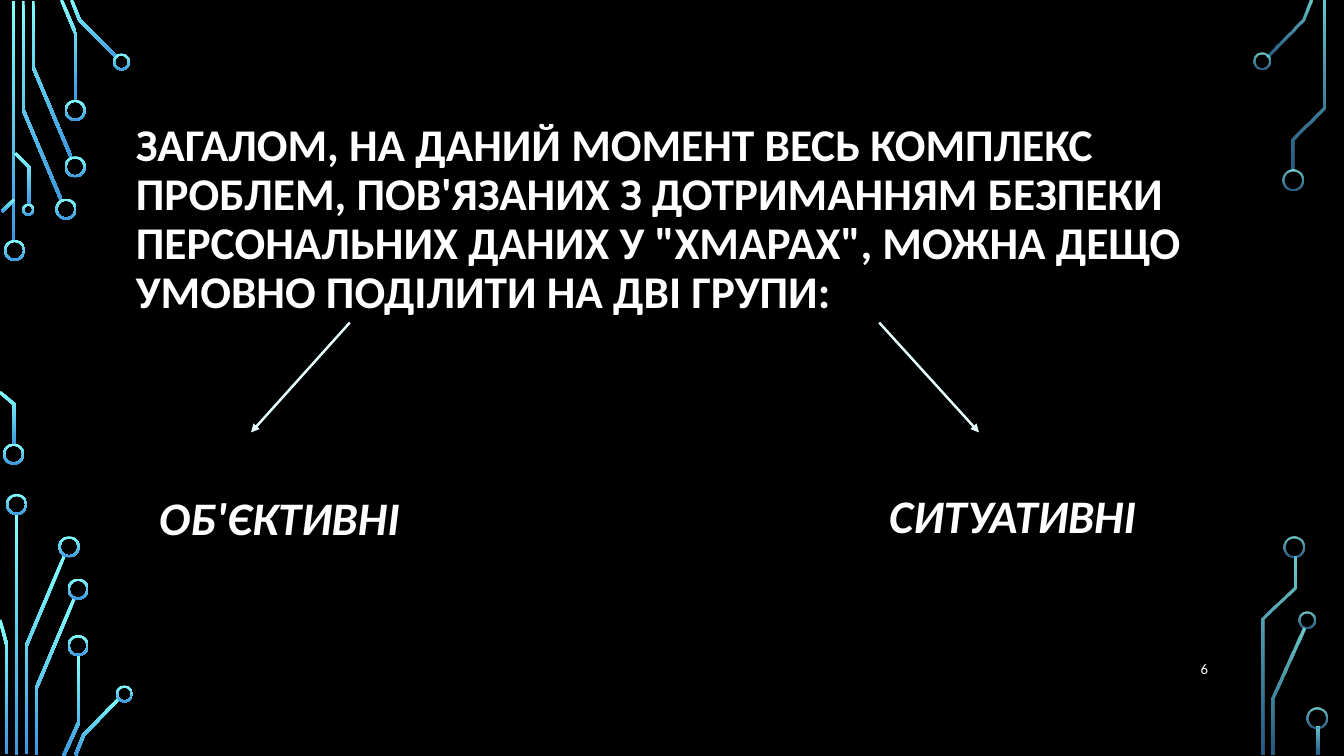
from math import hypot

from lxml.etree import SubElement
from pptx import Presentation
from pptx.dml.color import RGBColor
from pptx.enum.shapes import MSO_CONNECTOR as Connector, MSO_SHAPE as Shape
from pptx.enum.text import MSO_ANCHOR as Anchor, PP_ALIGN as Align
from pptx.oxml.ns import qn
from pptx.util import Pt

PX = 9144  # EMU in one px, at 100 px to the inch
BLACK = RGBColor(0x00, 0x00, 0x00)
WHITE = RGBColor(0xFF, 0xFF, 0xFF)
CYAN = RGBColor(0x82, 0xFF, 0xFF)
BLUE = RGBColor(0x3D, 0x97, 0xDE)
PALE = RGBColor(0xE6, 0xFF, 0xFF)

TRACE_WIDTH = 3
RING_WIDTH = 2
SOLID = (100, 100)
FADED = (80, 60)

# Circuit stems: left, top, height
LEFT_STEMS = [(12, 1, 239), (15, 510, 239)]
RIGHT_STEMS = [(1306, 721, 28)]

# Circuit traces: centre line points
LEFT_TRACES = [
    [(61, 199), (23, 109), (23, 1)],
    [(71, 157), (33, 67), (33, 1)],
    [(75, 100), (75, 33), (61, 0)],
    [(116, 57), (79, 20), (71, 0)],
    [(2, 210), (14, 198)],
    [(14, 441), (14, 401), (0, 389)],
    [(29, 203), (29, 166), (15, 152)],
    [(26, 748), (26, 641), (64, 551)],
    [(7, 748), (7, 641), (0, 615)],
    [(36, 749), (36, 683), (74, 593)],
    [(63, 750), (78, 717), (78, 650)],
    [(75, 749), (83, 729), (118, 693)],
]
RIGHT_TRACES = [
    [(1257, 56), (1292, 20), (1300, 0)],
    [(1263, 749), (1263, 693), (1293, 623)],
    [(1282, 169), (1282, 138), (1313, 107), (1313, 1)],
    [(1253, 749), (1253, 614), (1284, 583), (1284, 552)],
]

# Circuit rings: left, top, diameter
LEFT_RINGS = [
    (4, 238, 21), (3, 440, 21), (55, 197, 21), (64, 155, 21), (64, 99, 21),
    (112, 53, 17), (22, 202, 12), (6, 490, 21), (58, 532, 21),
    (67, 574, 21), (67, 630, 21), (115, 680, 17),
]
RIGHT_RINGS = [
    (1243, 52, 17), (1272, 168, 21), (1288, 607, 17),
    (1273, 532, 21), (1296, 702, 21),
]


def px(*lengths):
    return [round(length * PX) for length in lengths]


def paint(shape, alphas):
    """Fill from cyan at the top to blue at the bottom, with given opacities."""
    shape.shadow.inherit = False
    shape.line.fill.background()
    shape.fill.gradient()
    shape.fill.gradient_angle = 270
    for stop, color in zip(shape.fill.gradient_stops, (CYAN, BLUE)):
        stop.color.rgb = color
    if alphas != SOLID:
        colors = list(shape._element.spPr.iter(qn("a:srgbClr")))
        for color, alpha in zip(colors, alphas):
            SubElement(color, qn("a:alpha"), val=str(alpha * 1000))


def ribbon(points, width):
    """Return the outline of a mitred band along a centre line."""
    normals = []
    for (x1, y1), (x2, y2) in zip(points, points[1:]):
        length = hypot(x2 - x1, y2 - y1)
        normals.append(((y1 - y2) / length, (x2 - x1) / length))
    near, far = [], []
    befores = normals[:1] + normals
    afters = normals + normals[-1:]
    for (x, y), (ax, ay), (bx, by) in zip(points, befores, afters):
        reach = width / 2 / (1 + ax * bx + ay * by)
        dx, dy = reach * (ax + bx), reach * (ay + by)
        near.append((x + dx, y + dy))
        far.append((x - dx, y - dy))
    return near + far[::-1]


def add_trace(page, points, alphas):
    outline = [px(x, y) for x, y in ribbon(points, TRACE_WIDTH)]
    builder = page.shapes.build_freeform(*outline[0])
    builder.add_line_segments(outline[1:], close=True)
    paint(builder.convert_to_shape(), alphas)


def add_circuit(page, stems, traces, rings, alphas):
    for left, top, height in stems:
        place = px(left, top, TRACE_WIDTH, height)
        paint(page.shapes.add_shape(Shape.RECTANGLE, *place), alphas)
    for points in traces:
        add_trace(page, points, alphas)
    for left, top, size in rings:
        place = px(left, top, size, size)
        ring = page.shapes.add_shape(Shape.DONUT, *place)
        ring.adjustments[0] = RING_WIDTH / size
        paint(ring, alphas)


def add_text(page, place, text, size, anchor=Anchor.MIDDLE, spacing=1.0,
             align=Align.LEFT, bold=False, italic=False):
    box = page.shapes.add_textbox(*px(*place))
    frame = box.text_frame
    frame.word_wrap = True
    frame.vertical_anchor = anchor
    frame.text = text
    para = frame.paragraphs[0]
    para.alignment = align
    para.line_spacing = spacing
    font = para.runs[0].font
    font.name = "Calibri"
    font.size = Pt(size)
    font.bold = bold
    font.italic = italic
    font.color.rgb = WHITE


def add_arrow(page, start, end):
    arrow = page.shapes.add_connector(Connector.STRAIGHT, *px(*start, *end))
    arrow.line.color.rgb = PALE
    arrow.line.width = Pt(1.75)
    SubElement(arrow.line._get_or_add_ln(), qn("a:tailEnd"), type="triangle")
    SubElement(arrow._element.spPr, qn("a:effectLst"))


def main():
    deck = Presentation()
    deck.slide_width, deck.slide_height = px(1333, 750)
    page = deck.slides.add_slide(deck.slide_layouts[6])
    page.background.fill.solid()
    page.background.fill.fore_color.rgb = BLACK

    add_circuit(page, LEFT_STEMS, LEFT_TRACES, LEFT_RINGS, SOLID)
    add_circuit(page, RIGHT_STEMS, RIGHT_TRACES, RIGHT_RINGS, FADED)

    add_text(page, (125, 118, 1083, 202),
             "ЗАГАЛОМ, НА ДАНИЙ МОМЕНТ ВЕСЬ КОМПЛЕКС ПРОБЛЕМ, "
             "ПОВ'ЯЗАНИХ З ДОТРИМАННЯМ БЕЗПЕКИ ПЕРСОНАЛЬНИХ ДАНИХ "
             "У \"ХМАРАХ\", МОЖНА ДЕЩО УМОВНО ПОДІЛИТИ НА ДВІ ГРУПИ:",
             32.4, spacing=0.9, bold=True)
    groups = [
        ("ОБ'ЄКТИВНІ", (148, 454, 299, 90), 0.7, (347, 320), (249, 429)),
        ("СИТУАТИВНІ", (872, 454, 315, 90), 0.9, (872, 320), (971, 429)),
    ]
    for name, place, spacing, start, end in groups:
        add_text(page, place, name, 33.3, Anchor.BOTTOM, spacing,
                 bold=True, italic=True)
        add_arrow(page, start, end)
    add_text(page, (1124, 643, 84, 40), "6", 10.5, align=Align.RIGHT)

    deck.save("out.pptx")


if __name__ == "__main__":
    main()
